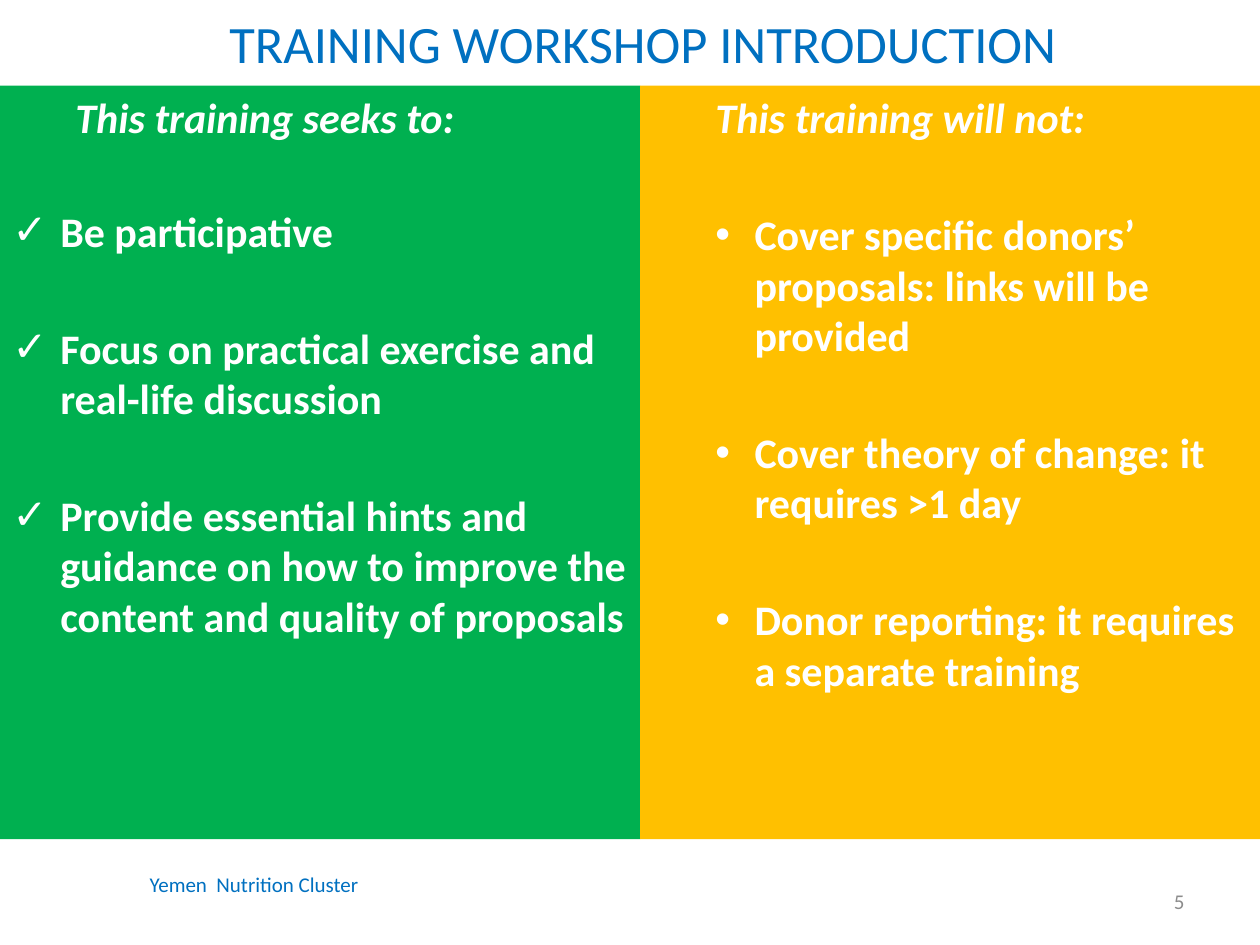
"""Build the training workshop introduction slide with two contrasting panels."""
from dataclasses import dataclass

from lxml import etree
from pptx import Presentation
from pptx.dml.color import RGBColor
from pptx.enum.shapes import MSO_SHAPE
from pptx.enum.text import MSO_ANCHOR, PP_ALIGN
from pptx.oxml.ns import qn
from pptx.util import Inches, Pt

RECTANGLE = MSO_SHAPE.RECTANGLE
TOP, MIDDLE = MSO_ANCHOR.TOP, MSO_ANCHOR.MIDDLE
LEFT, CENTER, RIGHT = PP_ALIGN.LEFT, PP_ALIGN.CENTER, PP_ALIGN.RIGHT


@dataclass(frozen=True)
class Theme:
    font: str = "Calibri"
    blue: str = "0070C0"
    green: str = "00B050"
    amber: str = "FFC000"
    white: str = "FFFFFF"
    gray: str = "8C8C8C"
    title: int = 30
    body: int = 24
    footer: int = 12


THEME = Theme()


def write(frame, text, size, color, align=LEFT, bold=False, italic=False,
          before=0, margin=0, hanging=0, bullet=None):
    first = frame.paragraphs[0]
    paragraph = first if not first.runs else frame.add_paragraph()
    paragraph.alignment = align
    paragraph.space_before = Pt(before)
    properties = paragraph._p.get_or_add_pPr()
    properties.set("marL", str(Inches(margin)))
    properties.set("indent", str(-Inches(hanging)))
    if bullet:
        etree.SubElement(properties, qn("a:buFont"), typeface="Arial")
        etree.SubElement(properties, qn("a:buChar"), char=bullet)
    run = paragraph.add_run()
    run.text = text
    font = run.font
    font.name, font.size, font.bold, font.italic = THEME.font, Pt(size), bold, italic
    font.color.rgb = RGBColor.from_string(color)


presentation = Presentation()
presentation.slide_width, presentation.slide_height = Inches(10), Inches(7.5)
slide = presentation.slides.add_slide(presentation.slide_layouts[5])

title = slide.shapes.title
title.left, title.top = Inches(0.34), Inches(-0.01)
title.width, title.height = Inches(9.53), Inches(0.69)
title.text_frame.vertical_anchor = MIDDLE
write(title.text_frame, "TRAINING WORKSHOP INTRODUCTION", THEME.title, THEME.blue, align=CENTER)

footers = [
    ("Yemen  Nutrition Cluster", 1.09, 6.92, 4.5, THEME.blue, LEFT, TOP, 0),
    ("5", 7.17, 6.95, 2.33, THEME.gray, RIGHT, MIDDLE, 0.05),
]
for text, left, top, width, color, align, anchor, inset in footers:
    footer = slide.shapes.add_textbox(Inches(left), Inches(top), Inches(width), Inches(0.4)).text_frame
    footer.word_wrap = True
    footer.vertical_anchor = anchor
    footer.margin_top = footer.margin_bottom = Inches(inset)
    write(footer, text, THEME.footer, color, align=align)

panels = [
    (0, 5.08, THEME.green, "This training seeks to:", "✓", 0.38, 0.38, 36, [
        "Be participative",
        "Focus on practical exercise and real-life discussion",
        "Provide essential hints and guidance on how to improve the content and quality of proposals",
    ]),
    (5.08, 4.92, THEME.amber, "This training will not:", "•", 0.81, 0.31, 38, [
        "Cover specific donors’ proposals: links will be provided",
        "Cover theory of change: it requires >1 day",
        "Donor reporting: it requires a separate training",
    ]),
]
for left, width, color, heading, bullet, margin, hanging, heading_gap, points in panels:
    panel = slide.shapes.add_shape(RECTANGLE, Inches(left), Inches(0.68), Inches(width), Inches(5.98))
    panel.shadow.inherit = False
    panel.fill.solid()
    panel.fill.fore_color.rgb = RGBColor.from_string(color)
    panel.line.fill.background()
    content = panel.text_frame
    content.word_wrap = True
    content.vertical_anchor = TOP
    write(content, heading, THEME.body, THEME.white, bold=True, italic=True, margin=0.5)
    for index, point in enumerate(points):
        write(content, point, THEME.body, THEME.white, bold=True, before=38 if index else heading_gap,
              margin=margin, hanging=hanging, bullet=bullet)

presentation.save("out.pptx")
